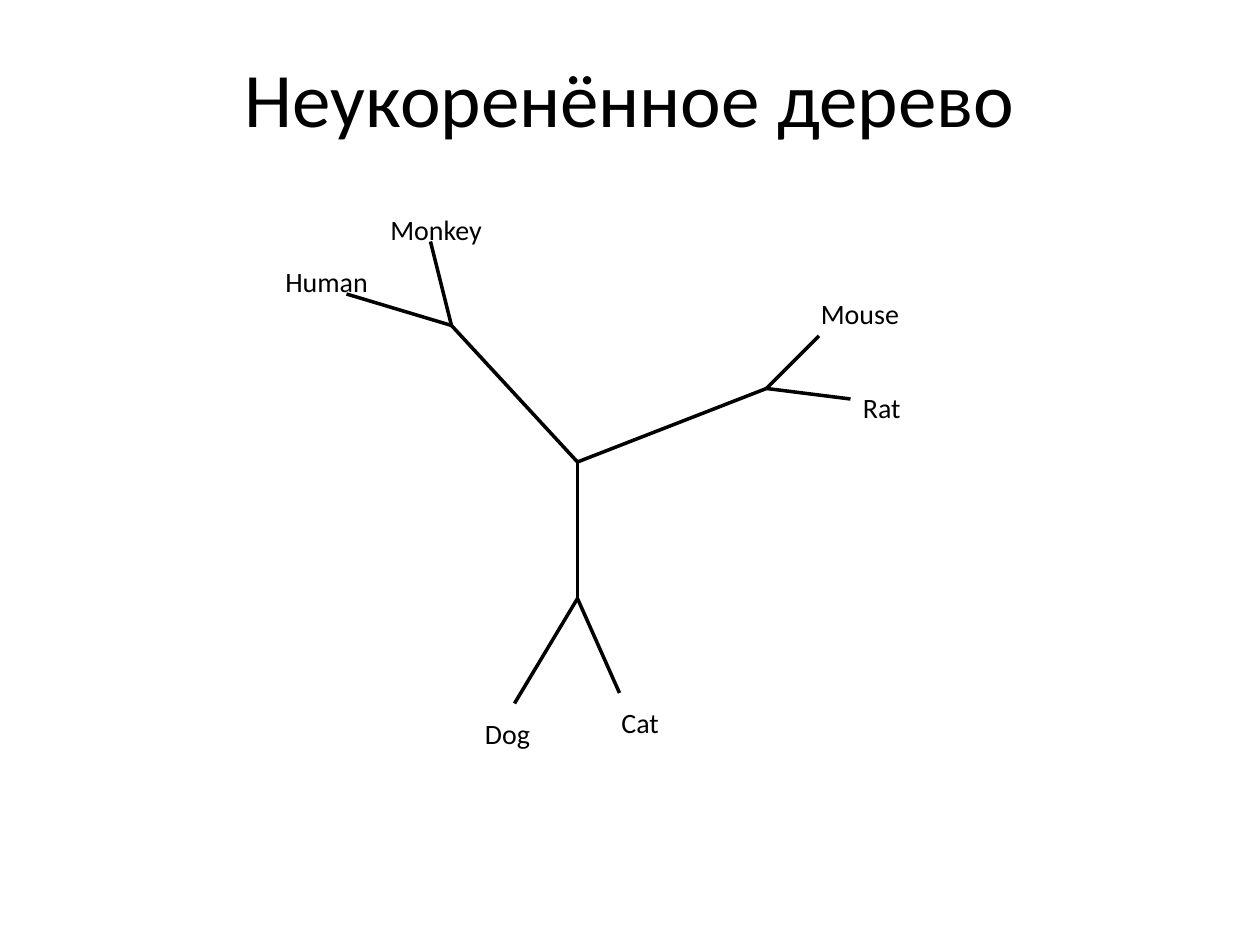
from lxml.etree import SubElement
from pptx import Presentation
from pptx.dml.color import RGBColor
from pptx.enum.shapes import MSO_CONNECTOR
from pptx.enum.text import MSO_ANCHOR, MSO_AUTO_SIZE, PP_ALIGN
from pptx.oxml.ns import qn
from pptx.util import Pt

COLORS = {"ink": "000000"}
INK = RGBColor.from_string(COLORS["ink"])


def write(shape, text, size, align):
    frame = shape.text_frame
    frame.text = text
    frame.word_wrap = True
    frame.auto_size = MSO_AUTO_SIZE.NONE
    frame.vertical_anchor = MSO_ANCHOR.TOP
    frame.margin_left = frame.margin_right = frame.margin_top = Pt(7.2)
    frame.margin_bottom = Pt(3.6)
    line = frame.paragraphs[0]
    line.alignment = align
    font = line.runs[0].font
    font.name = "Calibri"
    font.size = Pt(size)
    font.color.rgb = INK


prs = Presentation()
prs.slide_width, prs.slide_height = Pt(720), Pt(540)
slide = prs.slides.add_slide(prs.slide_layouts[5])

title = slide.shapes.title
title.left, title.top, title.width, title.height = Pt(36), Pt(21.6), Pt(648), Pt(90)
write(title, "Неукоренённое дерево", 44, PP_ALIGN.CENTER)

center = (330, 264)
clades = {
    (258, 186): [(198, 168), (246, 138)],
    (438, 222): [(468, 192), (486, 228)],
    (330, 342): [(294, 402), (354, 396)],
}
branches = []
for node, leaves in clades.items():
    branches.append((center, node))
    branches += [(node, leaf) for leaf in leaves]

for start, end in branches:
    branch = slide.shapes.add_connector(
        MSO_CONNECTOR.STRAIGHT, *[Pt(v) for v in start + end])
    branch.line.color.rgb = INK
    branch.line.width = Pt(2)
    SubElement(branch._element.spPr, qn("a:effectLst"))

species = [
    ("Human", 156, 144, 66),
    ("Monkey", 216, 114, 72),
    ("Mouse", 462, 162, 90),
    ("Rat", 486, 216, 48),
    ("Dog", 270, 402, 48),
    ("Cat", 348, 396, 48),
]
for name, left, top, width in species:
    label = slide.shapes.add_textbox(Pt(left), Pt(top), Pt(width), Pt(30))
    write(label, name, 16, PP_ALIGN.LEFT)

prs.save("out.pptx")
